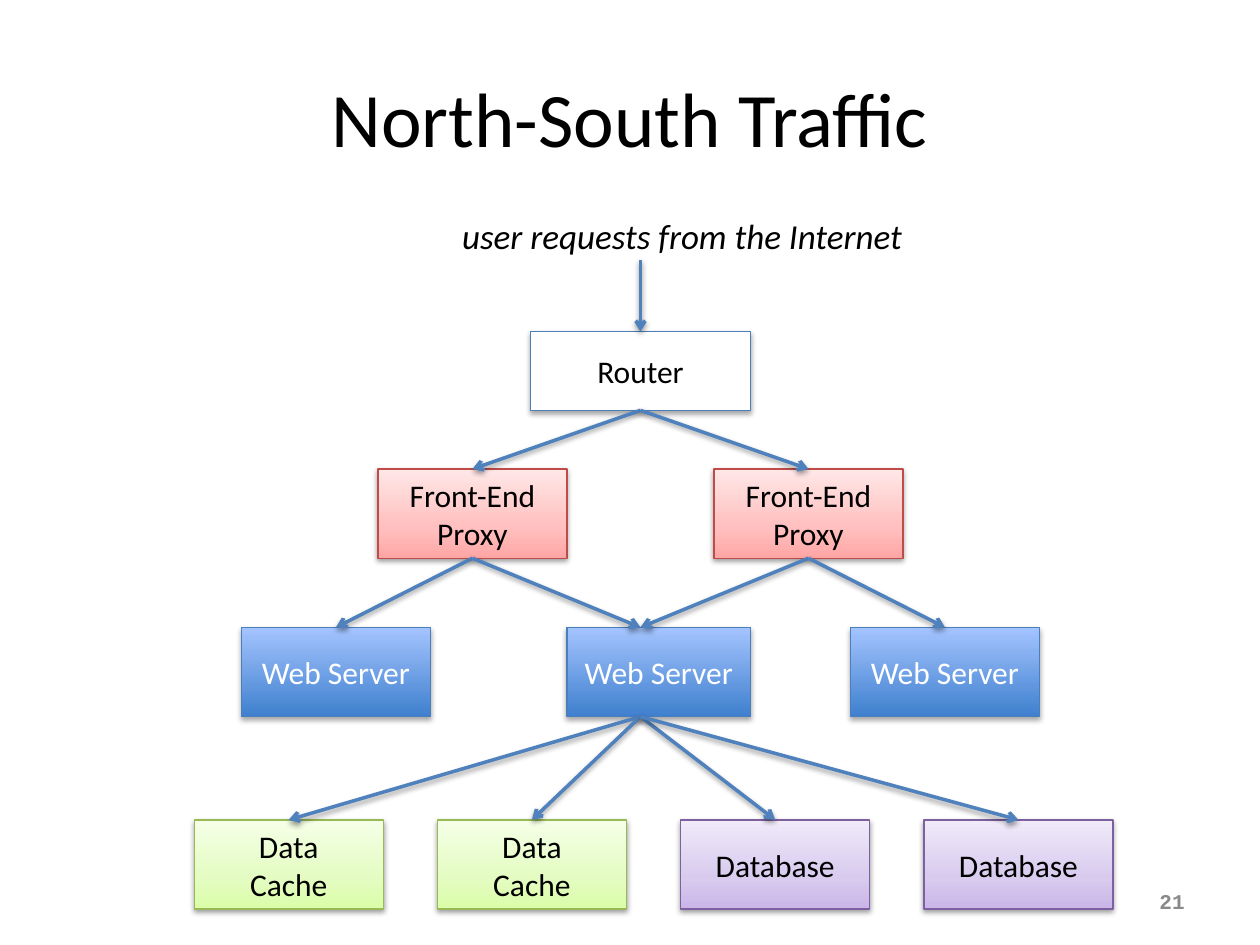
from copy import deepcopy
from dataclasses import dataclass

from lxml import etree
from pptx import Presentation
from pptx.dml.color import RGBColor
from pptx.enum import shapes, text
from pptx.oxml import ns
from pptx.util import Pt

TOP, BOTTOM = 0, 2  # connection sites of a rectangle


@dataclass(frozen=True)
class Tier:
    """Look of one kind of node: gradient stops run from bottom to top."""
    stops: tuple
    line: str
    ink: str = "000000"
    shadow: tuple = (38, 1.6)  # opacity in percent, distance in points


class Theme:
    font, number_font = "Calibri", "Courier New"
    ink, muted, arrow = "000000", "898989", "4F81BD"
    title, caption, label, number = 44, 20, 18, 12
    box_line, arrow_line, blur = 0.75, 2, 3.1
    arrow_shadow = (38, 1.6)
    router = Tier(((0, "FFFFFF"),), "4B7EBC", shadow=(35, 1.8))
    proxy = Tier(((0, "FFA6A5"), (0.35, "FFC0BF"), (1, "FFE7E7")), "BF4C48")
    web = Tier(((0, "3F80CE"), (1, "A4C4FF")), "4B7EBC", "FFFFFF", (35, 1.8))
    cache = Tier(((0, "DAFDA7"), (0.35, "E4FCC2"), (1, "F5FFE7")), "98B955")
    database = Tier(((0, "C9B5E8"), (0.35, "D8CBEE"), (1, "F0EAF9")), "7D60A0")


def rgb(value):
    return RGBColor.from_string(value)


def write(frame, content, size, color=Theme.ink, font=Theme.font, bold=False,
          italic=False, align=text.PP_ALIGN.CENTER,
          anchor=text.MSO_ANCHOR.MIDDLE, wrap=True):
    """Write one paragraph per line of content."""
    frame.word_wrap = wrap
    frame.vertical_anchor = anchor
    frame.text = content
    for paragraph in frame.paragraphs:
        paragraph.alignment = align
        for run in paragraph.runs:
            face = run.font
            face.name, face.size = font, Pt(size)
            face.bold, face.italic = bold, italic
            face.color.rgb = rgb(color)


def add_shadow(part, opacity, distance):
    """Cast a soft black shadow straight down."""
    properties = part._element.spPr
    for old in properties.findall(ns.qn("a:effectLst")):
        properties.remove(old)
    effects = etree.SubElement(properties, ns.qn("a:effectLst"))
    shadow = etree.SubElement(
        effects, ns.qn("a:outerShdw"), blurRad=str(Pt(Theme.blur)),
        dist=str(Pt(distance)), dir="5400000", rotWithShape="0")
    black = etree.SubElement(shadow, ns.qn("a:srgbClr"), val="000000")
    etree.SubElement(black, ns.qn("a:alpha"), val=str(opacity * 1000))


def paint(node, stops):
    """Fill with one colour, or with an upward gradient of two or three."""
    if len(stops) == 1:
        node.fill.solid()
        node.fill.fore_color.rgb = rgb(stops[0][1])
        return
    node.fill.gradient()
    node.fill.gradient_angle = 90
    if len(stops) == 3:
        stop_list = node._element.spPr.find(".//" + ns.qn("a:gsLst"))
        stop_list.append(deepcopy(stop_list[0]))
    for stop, (position, color) in zip(node.fill.gradient_stops, stops):
        stop.position = position
        stop.color.rgb = rgb(color)


def add_node(slide, label, tier, left, top, width=108, height=51):
    node = slide.shapes.add_shape(shapes.MSO_SHAPE.RECTANGLE, Pt(left), Pt(top),
                                  Pt(width), Pt(height))
    paint(node, tier.stops)
    node.line.color.rgb = rgb(tier.line)
    node.line.width = Pt(Theme.box_line)
    add_shadow(node, *tier.shadow)
    write(node.text_frame, label, Theme.label, tier.ink)
    return node


def add_arrow(slide, source, target):
    """Draw an arrow; each end is a node to join or an (x, y) point."""
    ends = [end if isinstance(end, tuple) else (0, 0) for end in (source, target)]
    arrow = slide.shapes.add_connector(
        shapes.MSO_CONNECTOR.STRAIGHT, *(Pt(v) for end in ends for v in end))
    if not isinstance(source, tuple):
        arrow.begin_connect(source, BOTTOM)
    if not isinstance(target, tuple):
        arrow.end_connect(target, TOP)
    arrow.line.color.rgb = rgb(Theme.arrow)
    arrow.line.width = Pt(Theme.arrow_line)
    etree.SubElement(arrow.line._get_or_add_ln(), ns.qn("a:tailEnd"), type="arrow")
    add_shadow(arrow, *Theme.arrow_shadow)


def add_text(slide, content, left, top, width, height, **style):
    box = slide.shapes.add_textbox(Pt(left), Pt(top), Pt(width), Pt(height))
    write(box.text_frame, content, **style)


def main():
    deck = Presentation()
    deck.slide_width, deck.slide_height = Pt(720), Pt(540)
    slide = deck.slides.add_slide(deck.slide_layouts[5])

    # Title and slide number
    title = slide.shapes.title
    title.left, title.top, title.width, title.height = map(Pt, (36, 21.6, 648, 90))
    write(title.text_frame, "North-South Traffic", Theme.title)
    add_text(slide, "21", 516, 500.5, 168, 28.8, size=Theme.number,
             color=Theme.muted, font=Theme.number_font, bold=True,
             align=text.PP_ALIGN.RIGHT)

    # Tiers of the network, from the router down
    axis, web_top, web_height = 366, 358.5, 51
    router = add_node(slide, "Router", Theme.router, 303, 189.5, 126, 45)
    proxies = [add_node(slide, "Front-End\nProxy", Theme.proxy, left, 268)
               for left in (216, 408)]
    web_left, _, web_right = [
        add_node(slide, "Web Server", Theme.web, left, web_top, width, web_height)
        for left, width in ((138, 108), (324, 105), (486, 108))]
    stores = [("Data\nCache", Theme.cache)] * 2 + [("Database", Theme.database)] * 2
    backends = [add_node(slide, label, tier, 111 + 139 * column, 468.5)
                for column, (label, tier) in enumerate(stores)]

    # Traffic; arrows at the middle web server keep to the router's axis
    web_in, web_out = (axis, web_top), (axis, web_top + web_height)
    links = [((axis, 148.5), router)]
    links += [(router, proxy) for proxy in proxies]
    links += [(proxies[0], web_left), (proxies[0], web_in),
              (proxies[1], web_in), (proxies[1], web_right)]
    links += [(web_out, backend) for backend in backends]
    for source, target in links:
        add_arrow(slide, source, target)

    # Caption above the router
    add_text(slide, "user requests from the Internet", 257, 119, 273.6, 31.5,
             size=Theme.caption, italic=True, align=text.PP_ALIGN.LEFT,
             anchor=text.MSO_ANCHOR.TOP, wrap=False)

    deck.save("out.pptx")


if __name__ == "__main__":
    main()
